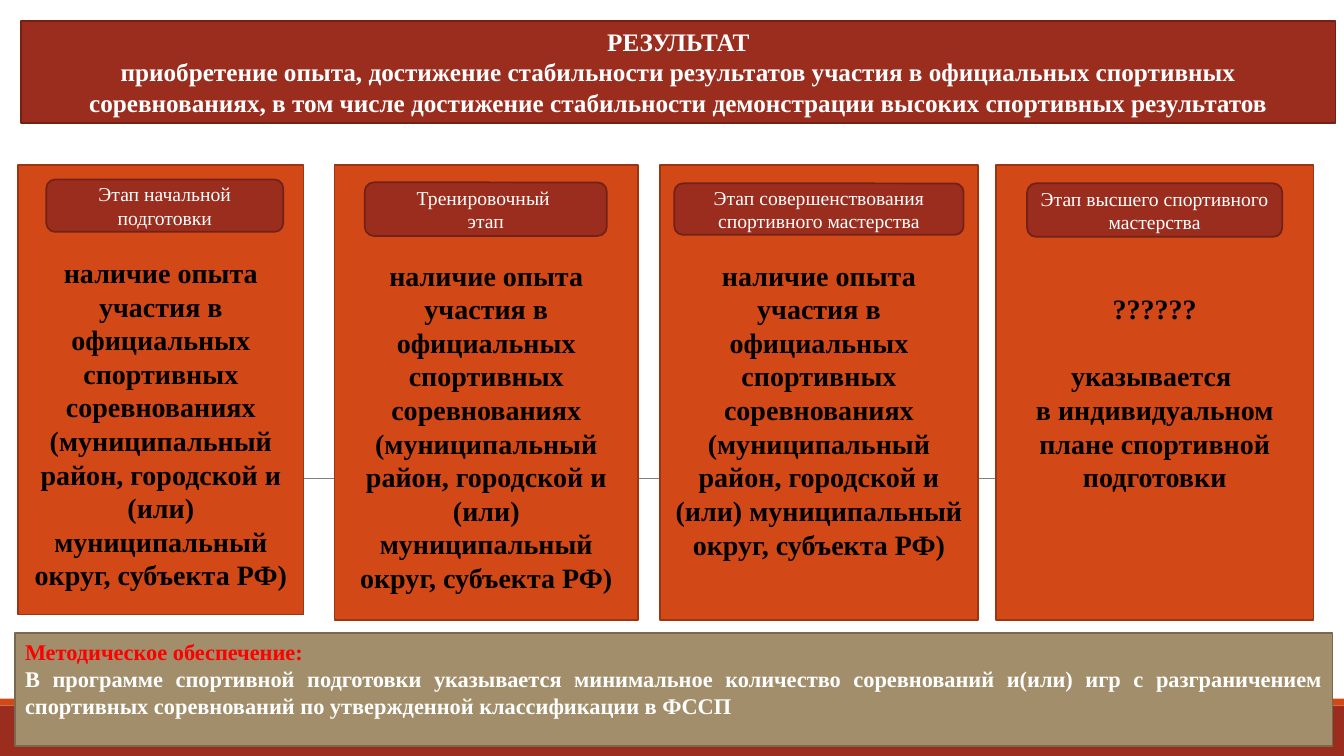
from dataclasses import dataclass

from lxml.etree import SubElement
from pptx import Presentation
from pptx.dml.color import RGBColor
from pptx.enum.shapes import MSO_CONNECTOR as Connector, MSO_SHAPE as Preset
from pptx.enum.text import MSO_ANCHOR as Anchor, MSO_AUTO_SIZE as AutoSize, PP_ALIGN as Align
from pptx.oxml.ns import qn
from pptx.util import Pt


@dataclass(frozen=True)
class Theme:
    font: str = "Times New Roman"
    dark_red: str = "9B2D1F"
    dark_red_edge: str = "732117"
    orange: str = "D34817"
    orange_edge: str = "9C3511"
    sand: str = "A28E6A"
    sand_edge: str = "78694E"
    grey: str = "808080"
    white: str = "FFFFFF"
    black: str = "000000"
    alert: str = "FF0000"
    title_size: float = 18
    card_size: float = 20
    label_size: float = 14
    note_size: float = 16
    edge_width: float = 1.25
    card_line: float = 24


@dataclass(frozen=True)
class Area:
    left: float
    top: float
    width: float
    height: float

    def points(self) -> tuple:
        return Pt(self.left), Pt(self.top), Pt(self.width), Pt(self.height)


@dataclass(frozen=True)
class Insets:
    left: float = 7.2
    top: float = 3.6
    right: float = 7.2
    bottom: float = 3.6


@dataclass(frozen=True)
class Stage:
    card: Area
    label_area: Area
    label: str
    text: str
    insets: Insets = Insets()


THEME = Theme()
EXPERIENCE = (
    "наличие опыта участия в официальных спортивных соревнованиях "
    "(муниципальный район, городской и (или) муниципальный округ, субъекта РФ)"
)
TITLE = (
    "РЕЗУЛЬТАТ\n"
    "приобретение опыта, достижение стабильности результатов участия в официальных "
    "спортивных соревнованиях, в том числе достижение стабильности демонстрации "
    "высоких спортивных результатов"
)
NOTE = (
    "Методическое обеспечение:\n"
    "В программе спортивной подготовки указывается минимальное количество соревнований "
    "и(или) игр с разграничением спортивных соревнований по утвержденной классификации в ФССП"
)
STAGES = [
    Stage(Area(13, 118, 203.8, 321), Area(33.1, 128.2, 169.2, 37.4),
          "Этап начальной подготовки", EXPERIENCE,
          Insets(2.9, 2 * THEME.card_line, 2.9, 0)),
    Stage(Area(239, 118, 216.7, 324.7), Area(260.6, 130.3, 172.8, 38.2),
          "Тренировочный \nэтап", EXPERIENCE,
          Insets(top=3.6 + 2 * THEME.card_line)),
    Stage(Area(471.6, 118, 226.8, 324.7), Area(481.7, 131, 206.6, 36.7),
          "Этап совершенствования спортивного мастерства", EXPERIENCE,
          Insets(top=3.6 + THEME.card_line)),
    Stage(Area(711.4, 118, 226.8, 324.7), Area(733.7, 131, 182.2, 38.2),
          "Этап высшего спортивного мастерства",
          "??????\nуказывается \nв индивидуальном плане спортивной подготовки"),
]


def color(value: str) -> RGBColor:
    return RGBColor.from_string(value)


def paint(box, fill: str, edge: str = "") -> None:
    box.fill.solid()
    box.fill.fore_color.rgb = color(fill)
    if edge:
        box.line.color.rgb = color(edge)
        box.line.width = Pt(THEME.edge_width)
    else:
        box.line.fill.background()


def add_box(page, preset, area: Area, fill: str, edge: str = ""):
    box = page.shapes.add_shape(preset, *area.points())
    box.shadow.inherit = False
    paint(box, fill, edge)
    return box


def write(box, text: str, size: float, ink: str, bold: bool,
          insets: Insets = Insets()) -> list:
    """Fill the box with centred paragraphs and return them."""
    frame = box.text_frame
    frame.text = text
    frame.word_wrap = True
    frame.auto_size = AutoSize.NONE
    frame.vertical_anchor = Anchor.MIDDLE
    frame.margin_left, frame.margin_top = Pt(insets.left), Pt(insets.top)
    frame.margin_right, frame.margin_bottom = Pt(insets.right), Pt(insets.bottom)
    for para in frame.paragraphs:
        para.alignment = Align.CENTER
        for span in para.runs:
            span.font.name = THEME.font
            span.font.size = Pt(size)
            span.font.bold = bold
            span.font.color.rgb = color(ink)
    return list(frame.paragraphs)


def add_title(page) -> None:
    title = page.shapes.title
    title.left, title.top, title.width, title.height = Area(15, 15, 939, 72.7).points()
    SubElement(title.element.spPr, qn("a:prstGeom"), prst="roundRect")
    paint(title, THEME.dark_red, THEME.dark_red_edge)
    write(title, TITLE, THEME.title_size, THEME.white, True)


def add_backdrop(page) -> None:
    add_box(page, Preset.RECTANGLE, Area(0, 504, 960, 36), THEME.dark_red)
    add_box(page, Preset.RECTANGLE, Area(0, 499, 960, 5), THEME.orange)
    rule = page.shapes.add_connector(
        Connector.STRAIGHT, Pt(95), Pt(342), Pt(872.6), Pt(342))
    rule.line.color.rgb = color(THEME.grey)
    rule.line.width = Pt(0.5)
    SubElement(rule.element.spPr, qn("a:effectLst"))


def add_stage(page, stage: Stage) -> None:
    card = add_box(page, Preset.RECTANGLE, stage.card, THEME.orange, THEME.orange_edge)
    paras = write(card, stage.text, THEME.card_size, THEME.black, True, stage.insets)
    if len(paras) > 1:
        paras[1].space_before = Pt(THEME.card_line)
    label = add_box(page, Preset.ROUNDED_RECTANGLE, stage.label_area,
                    THEME.dark_red, THEME.dark_red_edge)
    write(label, stage.label, THEME.label_size, THEME.white, False)


def add_note(page) -> None:
    note = add_box(page, Preset.RECTANGLE, Area(10.8, 452.2, 941, 80.6),
                   THEME.sand, THEME.sand_edge)
    heading, body = write(note, NOTE, THEME.note_size, THEME.white, True,
                          Insets(bottom=19))
    heading.alignment = Align.LEFT
    heading.runs[0].font.color.rgb = color(THEME.alert)
    body.alignment = Align.JUSTIFY


def main() -> None:
    deck = Presentation()
    deck.slide_width, deck.slide_height = Pt(960), Pt(540)
    page = deck.slides.add_slide(deck.slide_layouts.get_by_name("Title Only"))
    add_title(page)
    add_backdrop(page)
    for stage in STAGES:
        add_stage(page, stage)
    add_note(page)
    deck.save("out.pptx")


if __name__ == "__main__":
    main()
